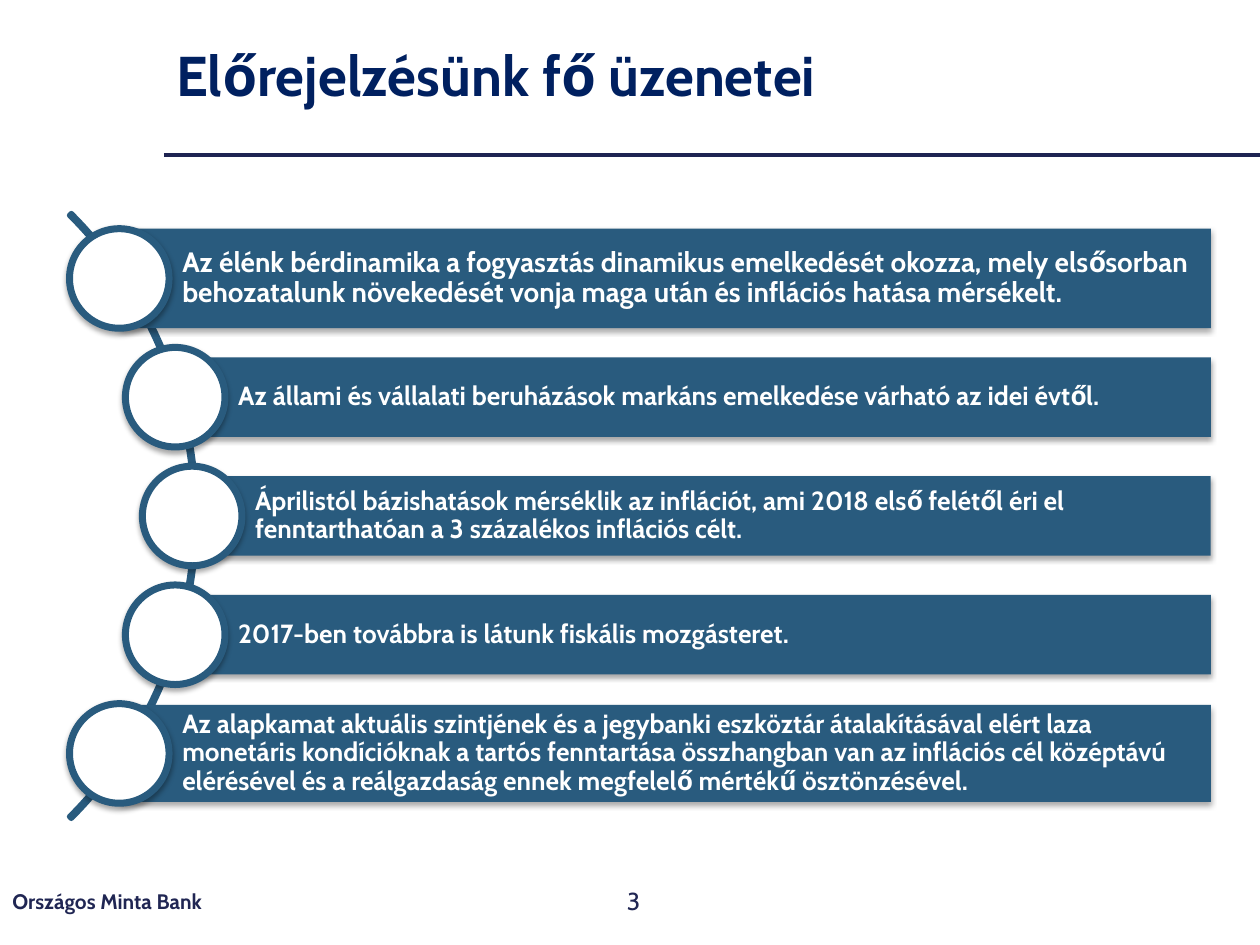
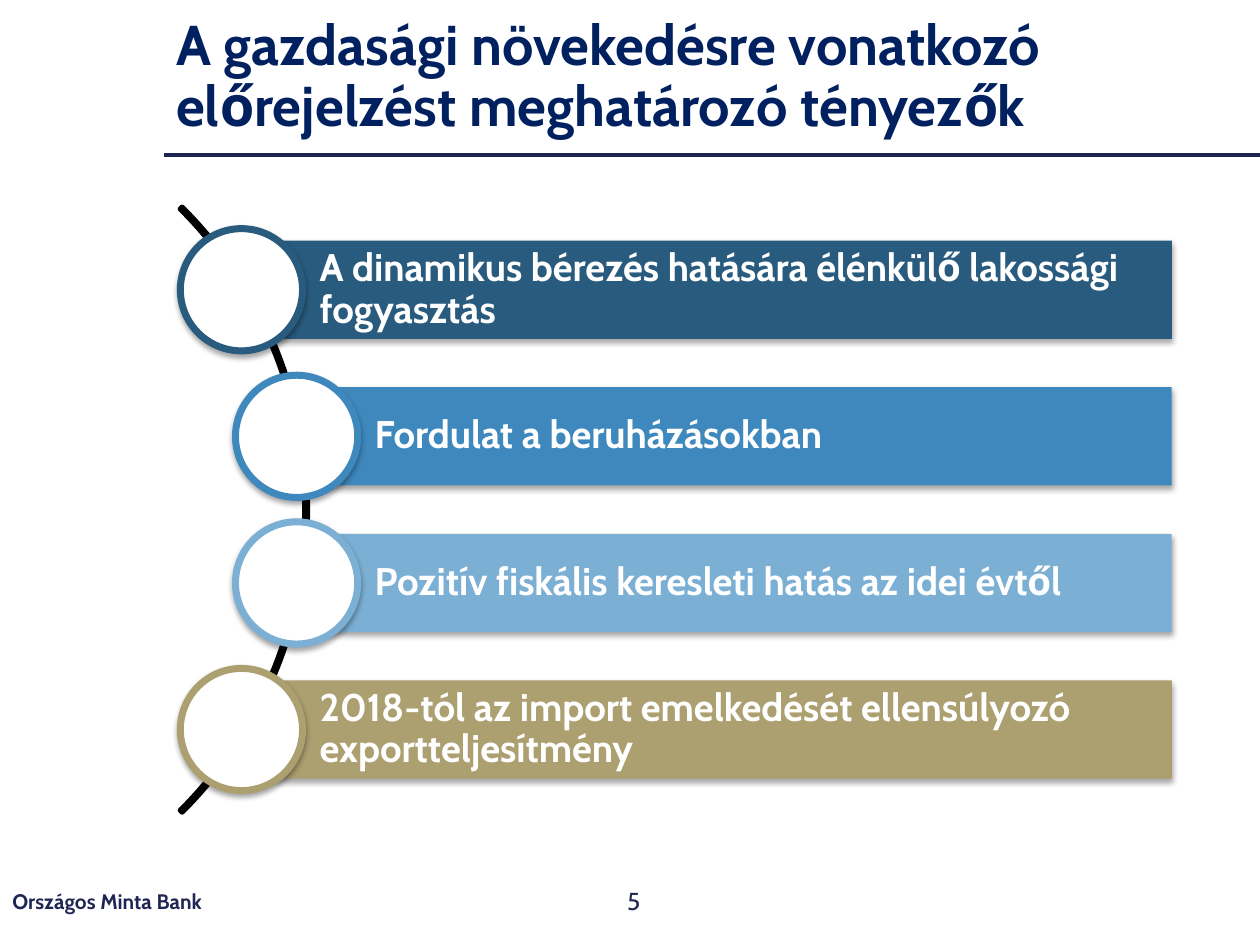
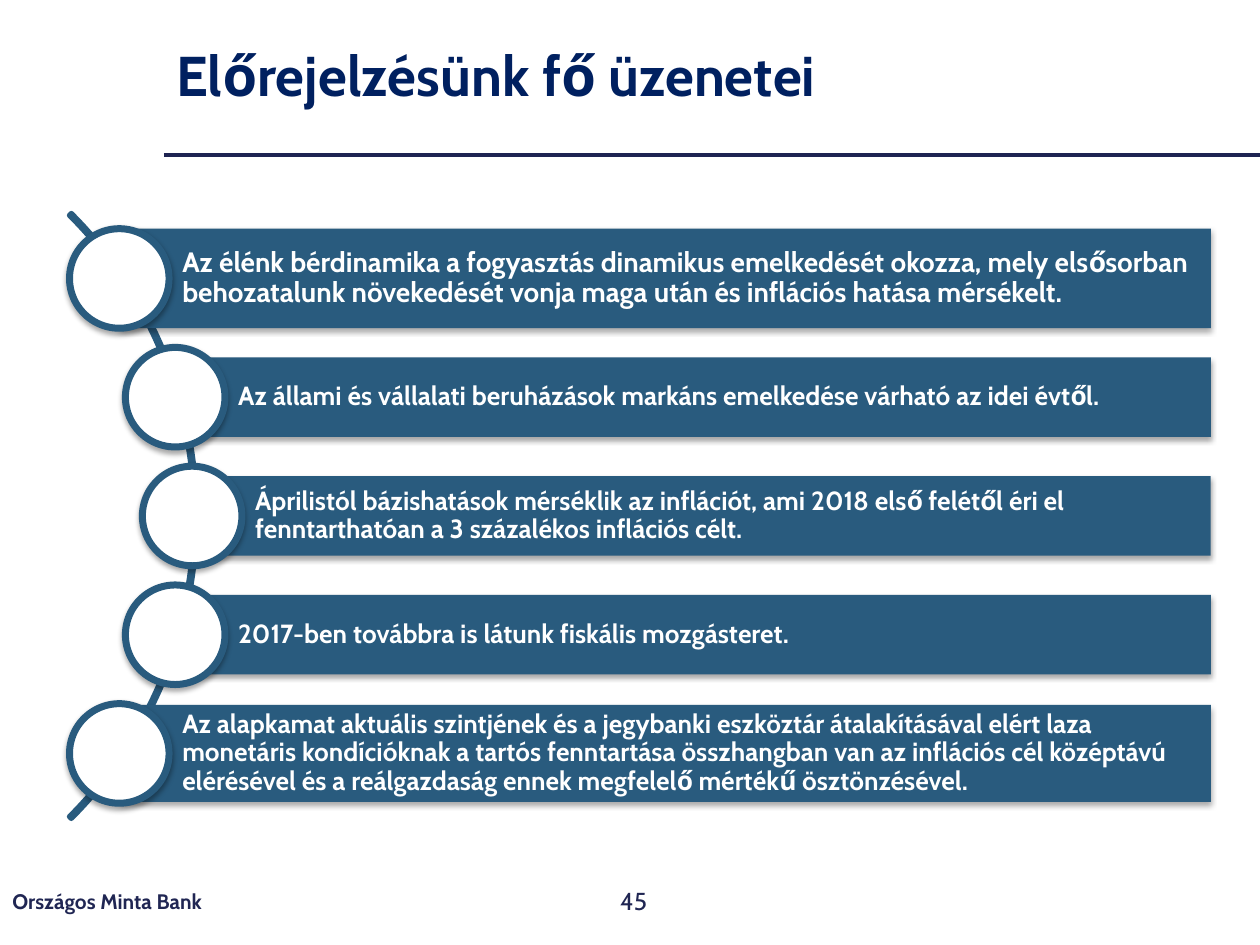
from math import sqrt

from lxml.etree import SubElement
from pptx import Presentation
from pptx.dml.color import RGBColor
from pptx.enum.shapes import MSO_CONNECTOR as Connector, MSO_SHAPE as Shape
from pptx.enum.text import MSO_ANCHOR as Anchor, PP_ALIGN as Align
from pptx.oxml.ns import qn
from pptx.util import Inches, Pt

FONT = "Cabin"
NAVY, TITLE_BLUE, FOOTER_BLUE = "1E2452", "002060", "202653"
TEAL, BLUE, SKY, SAND = "295B7E", "3E88BE", "7BAFD4", "AC9F70"
WHITE, BLACK = "FFFFFF", "000000"
FOOTER = "Országos Minta Bank"
ARC_SIZE = 6.79
CIRCLE_PATH_RADIUS = 3.36

MAIN_MESSAGES = {
    "title": "Előrejelzésünk fő üzenetei",
    "arc_left": -5.23, "arc_color": TEAL,
    "first_center": 2.21, "last_center": 5.98,
    "circle": 0.79, "right": 9.61, "insets": (0.5, 0.04),
    "bars": [
        ("Az élénk bérdinamika a fogyasztás dinamikus emelkedését okozza, mely elsősorban "
         "behozatalunk növekedését vonja maga után és inflációs hatása mérsékelt.", TEAL, 0.79, 16),
        ("Az állami és vállalati beruházások markáns emelkedése várható az idei évtől.", TEAL, 0.63, 15),
        ("Áprilistól bázishatások mérséklik az inflációt, ami 2018 első felétől éri el "
         "fenntarthatóan a 3 százalékos inflációs célt.", TEAL, 0.63, 15),
        ("2017-ben továbbra is látunk fiskális mozgásteret.", TEAL, 0.63, 15),
        ("Az alapkamat aktuális szintjének és a jegybanki eszköztár átalakításával elért laza "
         "monetáris kondícióknak a tartós fenntartása összhangban van az inflációs cél középtávú "
         "elérésével és a reálgazdaság ennek megfelelő mértékű ösztönzésével.", TEAL, 0.77, 15),
    ],
}
GROWTH_FACTORS = {
    "title": "A gazdasági növekedésre vonatkozó előrejelzést meghatározó tényezők",
    "arc_left": -4.35, "arc_color": BLACK,
    "first_center": 2.3, "last_center": 5.79,
    "circle": 0.97, "right": 9.3, "insets": (0.62, 0.06),
    "bars": [
        ("A dinamikus bérezés hatására élénkülő lakossági fogyasztás", TEAL, 0.78, 22),
        ("Fordulat a beruházásokban", BLUE, 0.78, 22),
        ("Pozitív fiskális keresleti hatás az idei évtől", SKY, 0.78, 22),
        ("2018-tól az import emelkedését ellensúlyozó exportteljesítmény", SAND, 0.78, 22),
    ],
}
SLIDES = [(3, MAIN_MESSAGES), (5, GROWTH_FACTORS), (45, MAIN_MESSAGES)]


def rgb(color):
    return RGBColor.from_string(color)


def write(box, text, size, color, bold=True, align=Align.LEFT, spacing=None, insets=(0.1, 0.05)):
    frame = box.text_frame
    frame.word_wrap = True
    frame.vertical_anchor = Anchor.MIDDLE
    left, other = insets
    frame.margin_left = Inches(left)
    frame.margin_top = frame.margin_bottom = frame.margin_right = Inches(other)
    para = frame.paragraphs[0]
    para.alignment = align
    para.line_spacing = spacing
    span = para.add_run()
    span.text = text
    span.font.name = FONT
    span.font.size = Pt(size)
    span.font.bold = bold
    span.font.color.rgb = rgb(color)


def add_label(page, place, text, **style):
    write(page.shapes.add_textbox(*map(Inches, place)), text, **style)


def add_shape(page, kind, place, fill=None, line=None, width=0):
    shape = page.shapes.add_shape(kind, *map(Inches, place))
    shape.shadow.inherit = False
    if fill:
        shape.fill.solid()
        shape.fill.fore_color.rgb = rgb(fill)
    else:
        shape.fill.background()
    if line:
        shape.line.color.rgb = rgb(line)
        shape.line.width = Pt(width)
    else:
        shape.line.fill.background()
    return shape


def add_shadow(shape):
    effects = shape._element.spPr.find(qn("a:effectLst"))
    shadow = SubElement(effects, qn("a:outerShdw"), blurRad="40000", dist="23000",
                        dir="5400000", rotWithShape="0")
    color = SubElement(shadow, qn("a:srgbClr"), val=BLACK)
    SubElement(color, qn("a:alpha"), val="35000")


def add_frame(page, title, number):
    rule = page.shapes.add_connector(Connector.STRAIGHT, *map(Inches, (1.3, 1.23, 10, 1.23)))
    rule.line.color.rgb = rgb(NAVY)
    rule.line.width = Pt(2.25)
    SubElement(rule._element.spPr, qn("a:effectLst"))
    add_label(page, (1.3, 0, 8.7, 1.24), title, size=32, color=TITLE_BLUE, spacing=0.9)
    add_label(page, (0, 6.95, 3.38, 0.4), FOOTER, size=12, color=FOOTER_BLUE)
    add_label(page, (3.88, 6.95, 2.25, 0.4), str(number), size=14, color=FOOTER_BLUE,
              bold=False, align=Align.CENTER)


def add_curved_list(page, content):
    first, last = content["first_center"], content["last_center"]
    middle = (first + last) / 2
    arc_left = content["arc_left"]
    arc = add_shape(page, Shape.BLOCK_ARC, (arc_left, middle - ARC_SIZE / 2, ARC_SIZE, ARC_SIZE),
                    line=content["arc_color"], width=3)
    for index, value in enumerate((189, 27, 0.003)):
        arc.adjustments[index] = value

    diameter, bars = content["circle"], content["bars"]
    step = (last - first) / (len(bars) - 1)
    for index, (text, color, height, size) in enumerate(bars):
        y = first + index * step
        x = arc_left + ARC_SIZE / 2 + sqrt(CIRCLE_PATH_RADIUS ** 2 - (y - middle) ** 2)
        bar = add_shape(page, Shape.RECTANGLE, (x, y - height / 2, content["right"] - x, height), fill=color)
        write(bar, text, size, WHITE, spacing=0.9, insets=content["insets"])
        circle = add_shape(page, Shape.OVAL, (x - diameter / 2, y - diameter / 2, diameter, diameter),
                           fill=WHITE, line=color, width=4)
        add_shadow(bar)
        add_shadow(circle)


def main():
    deck = Presentation()
    deck.slide_width, deck.slide_height = Inches(10), Inches(7.5)
    for number, content in SLIDES:
        page = deck.slides.add_slide(deck.slide_layouts[6])
        add_frame(page, content["title"], number)
        add_curved_list(page, content)
    deck.save("out.pptx")


if __name__ == "__main__":
    main()
